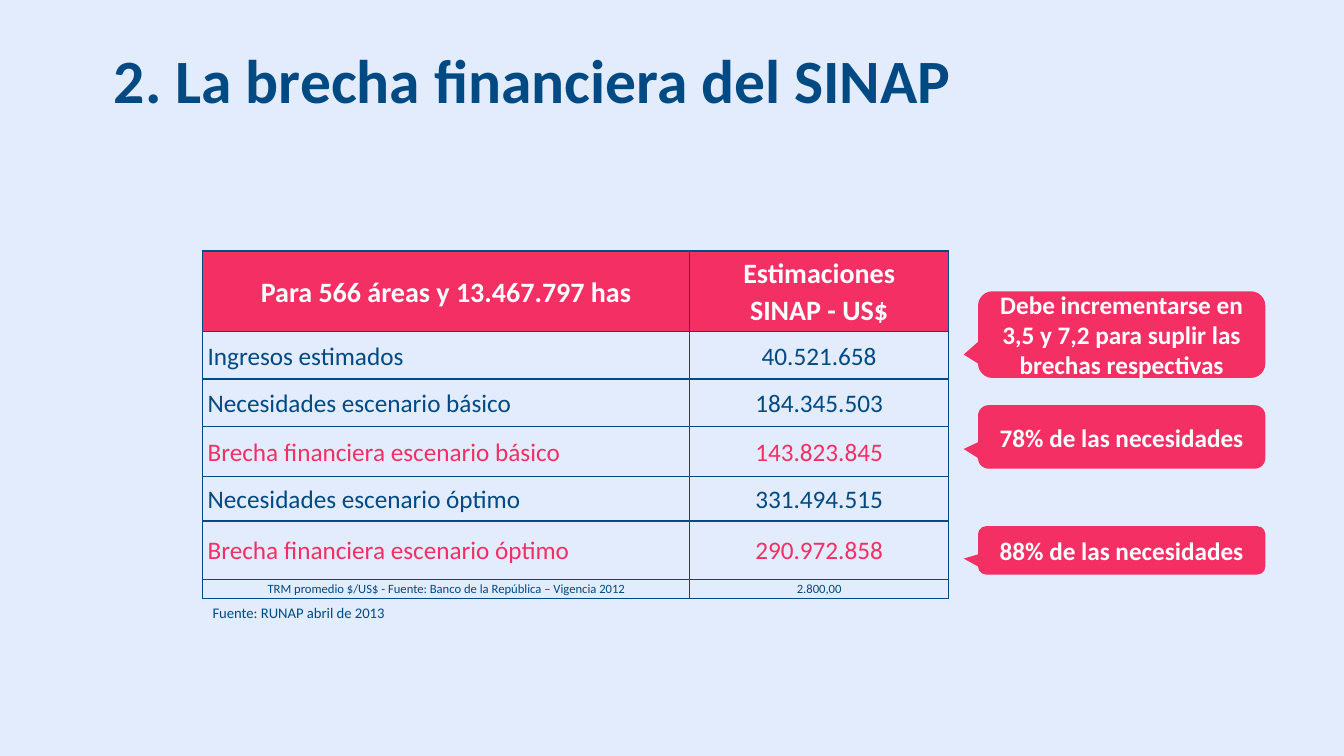
import pptx
import pptx.dml.color
import pptx.enum.shapes
import pptx.enum.text
import pptx.oxml
import pptx.oxml.ns
import pptx.util

Inches = pptx.util.Inches
ALIGN = pptx.enum.text.PP_ALIGN
MIDDLE = pptx.enum.text.MSO_ANCHOR.MIDDLE
NAVY, PINK, WHITE, PALE = "004A84", "F42F63", "FFFFFF", "E2ECFD"


def color(value):
    return pptx.dml.color.RGBColor.from_string(value)


def write(frame, text, size, ink, bold=False, align=ALIGN.LEFT, spacing=1.0):
    """Fill a text frame with one paragraph for each line of text."""
    frame.text = text
    for para in frame.paragraphs:
        para.alignment = align
        para.line_spacing = spacing
        for span in para.runs:
            font_format = {"name": "Calibri", "size": pptx.util.Pt(size), "bold": bold}
            for name, value in font_format.items():
                setattr(span.font, name, value)
            span.font.color.rgb = color(ink)


deck = pptx.Presentation()
deck.slide_width, deck.slide_height = Inches(13.33), Inches(7.5)
page = deck.slides.add_slide(deck.slide_layouts[5])
page.background.fill.solid()
page.background.fill.fore_color.rgb = color(PALE)

title = page.shapes.title
title_place = {"left": 1.03, "top": 0.26, "width": 8.67, "height": 1.14}
for name, value in title_place.items():
    setattr(title, name, Inches(value))
title.text_frame.vertical_anchor = MIDDLE
write(title.text_frame, "2. La brecha financiera del SINAP", 44, NAVY, True, spacing=0.9)

# Gap table: label, amount, row height, text size, ink, label alignment
rows = [
    ("Para 566 áreas y 13.467.797 has", "Estimaciones\nSINAP - US$", 0.8, 20, WHITE, ALIGN.CENTER),
    ("Ingresos estimados", "40.521.658", 0.47, 18, NAVY, ALIGN.LEFT),
    ("Necesidades escenario básico", "184.345.503", 0.47, 18, NAVY, ALIGN.LEFT),
    ("Brecha financiera escenario básico", "143.823.845", 0.5, 18, PINK, ALIGN.LEFT),
    ("Necesidades escenario óptimo", "331.494.515", 0.44, 18, NAVY, ALIGN.LEFT),
    ("Brecha financiera escenario óptimo", "290.972.858", 0.58, 18, PINK, ALIGN.LEFT),
    ("TRM promedio $/US$ - Fuente: Banco de la República – Vigencia 2012", "2.800,00",
     0.19, 9, NAVY, ALIGN.CENTER),
]
column_widths = [4.83, 2.57]
table_left, table_top = 2.01, 2.49
table_height = sum(row[2] for row in rows)
table = page.shapes.add_table(
    len(rows), len(column_widths), Inches(table_left), Inches(table_top),
    Inches(sum(column_widths)), Inches(table_height)).table
table.first_row = table.horz_banding = False
for column, width in zip(table.columns, column_widths):
    column.width = Inches(width)

cell_format = {
    "margin_left": Inches(0.05), "margin_right": Inches(0.05),
    "margin_top": 0, "margin_bottom": 0, "vertical_anchor": MIDDLE,
}
for row_index, (label, amount, height, size, ink, label_align) in enumerate(rows):
    table.rows[row_index].height = Inches(height)
    is_header = row_index == 0
    for column_index, (text, align) in enumerate([(label, label_align), (amount, ALIGN.CENTER)]):
        cell = table.cell(row_index, column_index)
        for name, value in cell_format.items():
            setattr(cell, name, value)
        write(cell.text_frame, text, size, ink, is_header, align, 1.07)
        properties = cell._tc.get_or_add_tcPr()
        for side in "LRTB":
            properties.append(pptx.oxml.parse_xml(
                f'<a:ln{side} {pptx.oxml.ns.nsdecls("a")} w="12700"><a:solidFill>'
                f'<a:srgbClr val="{NAVY}"/></a:solidFill></a:ln{side}>'))
        if is_header:
            cell.fill.solid()
            cell.fill.fore_color.rgb = color(PINK)
        else:
            cell.fill.background()

# Callouts beside the table: text, top, height, pointer tip
callouts = [
    ("Debe incrementarse en 3,5 y 7,2 para suplir las brechas respectivas", 2.89, 0.86, (-0.55, 0.23)),
    ("78% de las necesidades", 4.02, 0.63, (-0.55, 0.19)),
    ("88% de las necesidades", 5.22, 0.48, (-0.55, 0.17)),
]
for text, top, height, tip in callouts:
    callout = page.shapes.add_shape(
        pptx.enum.shapes.MSO_SHAPE.ROUNDED_RECTANGULAR_CALLOUT,
        Inches(9.7), Inches(top), Inches(2.85), Inches(height))
    callout.adjustments[0], callout.adjustments[1] = tip
    callout.shadow.inherit = False
    callout.fill.solid()
    callout.fill.fore_color.rgb = color(PINK)
    callout.line.fill.background()
    callout.text_frame.word_wrap = True
    callout.text_frame.vertical_anchor = MIDDLE
    write(callout.text_frame, text, 18, WHITE, True, ALIGN.CENTER)

source_box = page.shapes.add_textbox(
    Inches(table_left), Inches(table_top + table_height), Inches(1.94), Inches(0.28))
source_box.text_frame.word_wrap = False
source_box.text_frame.auto_size = pptx.enum.text.MSO_AUTO_SIZE.SHAPE_TO_FIT_TEXT
write(source_box.text_frame, "Fuente: RUNAP abril de 2013", 10.5, NAVY)

deck.save("out.pptx")
